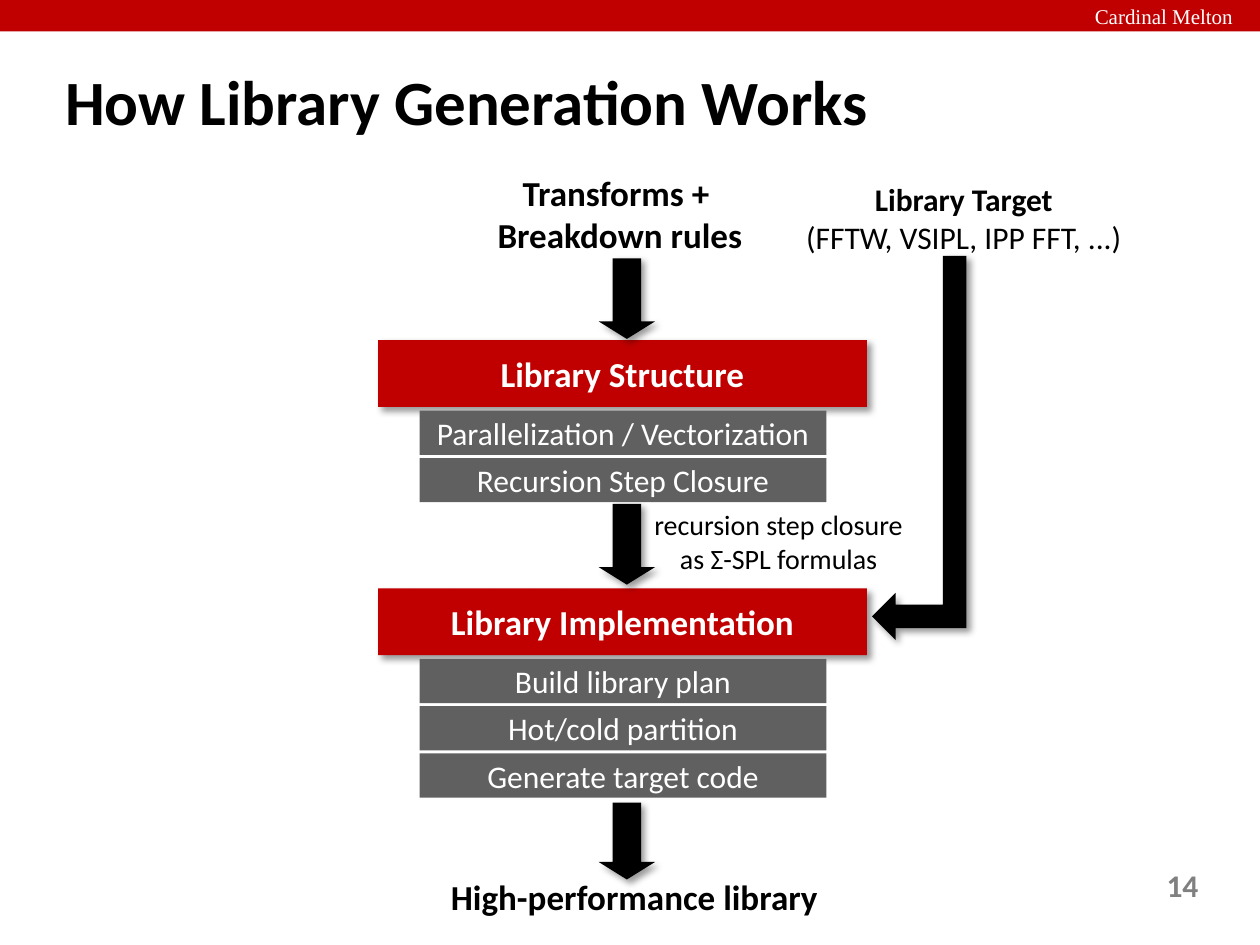
"""Build the slide on how library generation works."""
from lxml.etree import SubElement
from pptx import Presentation
from pptx.dml.color import RGBColor
from pptx.enum.shapes import MSO_SHAPE
from pptx.enum.text import MSO_ANCHOR, PP_ALIGN
from pptx.oxml.ns import qn
from pptx.util import Inches, Pt

COLORS = {"red": "C00000", "gray": "606060", "number": "808080", "black": "000000", "white": "FFFFFF"}


def write(shape, lines, size, color="black", bold=(True,), align=PP_ALIGN.CENTER,
          anchor=MSO_ANCHOR.TOP, font="Calibri", wrap=False):
    frame = shape.text_frame
    frame.text = "\n".join(lines)
    frame.word_wrap = wrap
    frame.vertical_anchor = anchor
    for index, para in enumerate(frame.paragraphs):
        para.alignment = align
        for span in para.runs:
            span.font.name = font
            span.font.size = Pt(size)
            span.font.bold = bold[index % len(bold)]
            span.font.color.rgb = RGBColor.from_string(COLORS[color])


def add_block(kind, left, top, width, height, color, shadow=False):
    block = page.shapes.add_shape(kind, Inches(left), Inches(top), Inches(width), Inches(height))
    block.fill.solid()
    block.fill.fore_color.rgb = RGBColor.from_string(COLORS[color])
    block.line.fill.background()
    block.shadow.inherit = False
    if shadow:
        effects = block.element.spPr.find(qn("a:effectLst"))
        outer = SubElement(effects, qn("a:outerShdw"), blurRad=str(Pt(4)), dist=str(Pt(3)),
                           dir="2700000", algn="tl", rotWithShape="0")
        tint = SubElement(outer, qn("a:srgbClr"), val=COLORS["black"])
        SubElement(tint, qn("a:alpha"), val="40000")
    return block


deck = Presentation()
deck.slide_width, deck.slide_height = Inches(10), Inches(7.5)
page = deck.slides.add_slide(deck.slide_layouts[6])

add_block(MSO_SHAPE.RECTANGLE, 0, 0, 10, 0.25, "red")

stages = [
    ("Library Structure", 2.7, 3.26, ["Parallelization / Vectorization", "Recursion Step Closure"]),
    ("Library Implementation", 4.67, 5.23,
     ["Build library plan", "Hot/cold partition", "Generate target code"]),
]
for heading, top, steps_top, steps in stages:
    header = add_block(MSO_SHAPE.RECTANGLE, 3, top, 3.88, 0.53, "red", shadow=True)
    write(header, [heading], 20, "white", anchor=MSO_ANCHOR.MIDDLE)
    for index, step in enumerate(steps):
        bar = add_block(MSO_SHAPE.RECTANGLE, 3.33, steps_top + index * 0.375, 3.23, 0.35, "gray")
        write(bar, [step], 18, "white", bold=(False,), anchor=MSO_ANCHOR.MIDDLE)

for top, height in [(2.05, 0.64), (4, 0.64), (6.37, 0.61)]:
    arrow = add_block(MSO_SHAPE.DOWN_ARROW, 4.75, top, 0.45, height, "black", shadow=True)
    arrow.adjustments[0], arrow.adjustments[1] = 0.5, 0.31

target_arrow = add_block(MSO_SHAPE.BENT_UP_ARROW, 5.77, 3.18, 3.05, 0.75, "black", shadow=True)
target_arrow.rotation = 270
target_arrow.element.spPr.find(qn("a:xfrm")).set("flipH", "1")

left_aligned = {"align": PP_ALIGN.LEFT}
labels = [
    (8.59, -0.02, 1.39, 0.3, ["Cardinal Melton"], 12,
     {"color": "white", "bold": (False,), "font": "Times New Roman", **left_aligned}),
    (0.42, 0.38, 9.57, 0.83, ["How Library Generation Works"], 36,
     {"anchor": MSO_ANCHOR.MIDDLE, "wrap": True, **left_aligned}),
    (3.84, 1.31, 2.16, 0.77, ["Transforms + ", "Breakdown rules"], 20, {}),
    (6.25, 1.38, 2.8, 0.71, ["Library Target", "(FFTW, VSIPL, IPP FFT, ...)"], 18,
     {"bold": (True, False)}),
    (5.08, 3.98, 2.2, 0.64, ["recursion step closure", "as Σ-SPL formulas"], 16,
     {"bold": (False,)}),
    (3.48, 6.9, 3.14, 0.44, ["High-performance library"], 20, left_aligned),
    (9.16, 6.82, 0.59, 0.52, ["14"], 18, {"color": "number", "wrap": True, **left_aligned}),
]
for left, top, width, height, lines, size, style in labels:
    box = page.shapes.add_textbox(Inches(left), Inches(top), Inches(width), Inches(height))
    write(box, lines, size, **style)

deck.save("out.pptx")
